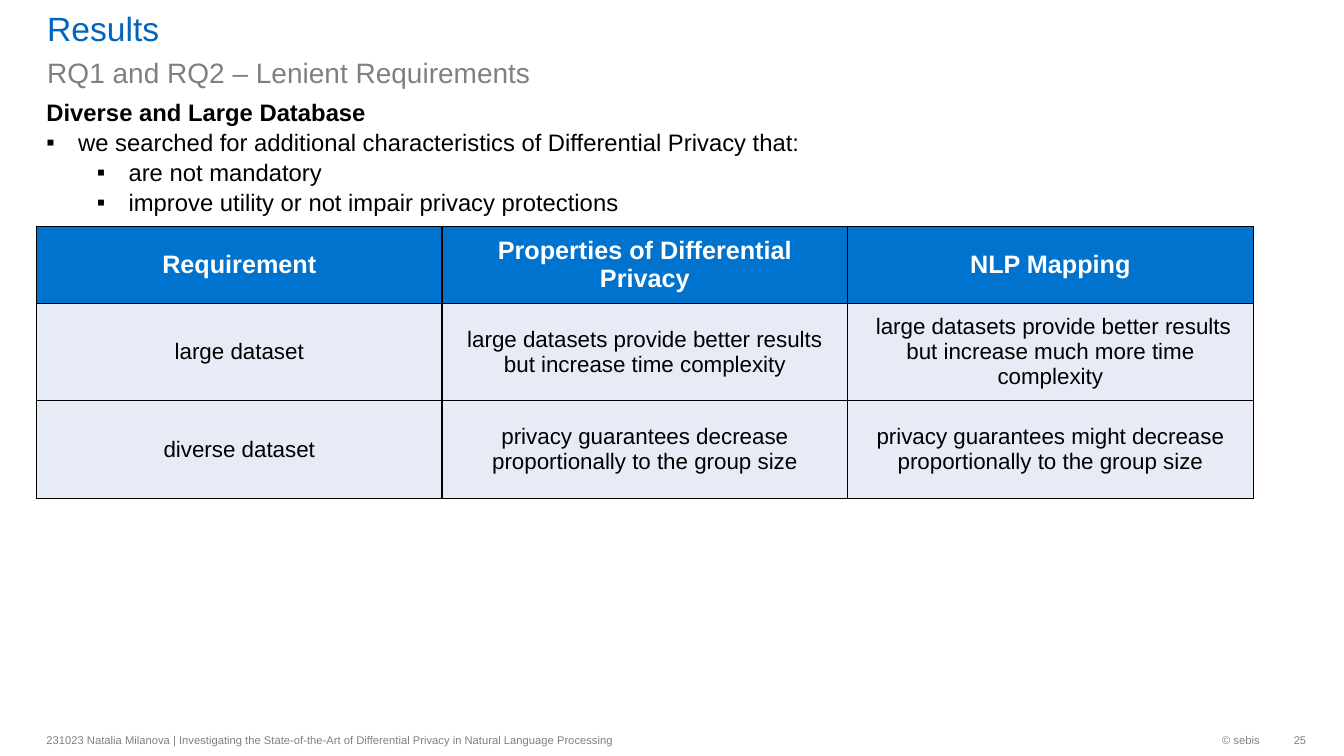
"""Builds the results slide on lenient requirements for differential privacy."""
from dataclasses import dataclass

from lxml import etree
from pptx import Presentation
from pptx import table as tb
from pptx import util as u
from pptx.dml import color as dml
from pptx.enum import text as et
from pptx.oxml import ns
from pptx.shapes import autoshape as au
from pptx.text import text as tx

COLORS = {
    "title": "0065BD", "grey": "808080", "black": "000000",
    "white": "FFFFFF", "header": "0073CF", "row": "E7EBF6",
}
LEFT, CENTER, RIGHT = et.PP_ALIGN.LEFT, et.PP_ALIGN.CENTER, et.PP_ALIGN.RIGHT
TOP, MIDDLE, BOTTOM = et.MSO_ANCHOR.TOP, et.MSO_ANCHOR.MIDDLE, et.MSO_ANCHOR.BOTTOM


@dataclass(frozen=True)
class Style:
    size: float
    color: str
    bold: bool = False
    align: et.PP_ALIGN = LEFT


@dataclass(frozen=True)
class Line:
    text: str
    style: Style
    level: int = 0
    indent: float = 0
    bullet: str = ""
    before: float = 0


@dataclass(frozen=True)
class Box:
    left: float
    top: float
    width: float
    height: float
    lines: tuple[Line, ...]
    anchor: et.MSO_ANCHOR = MIDDLE
    margins: tuple[float, float, float, float] = (0.25, 0.13, 0.25, 0.13)


TITLE = Style(24, "title")
SUBTITLE = Style(20, "grey")
LEAD = Style(17, "black", bold=True)
ITEM = Style(17, "black")
FOOTER = Style(8, "grey")
FOOTER_RIGHT = Style(8, "grey", align=RIGHT)
HEAD = Style(18, "white", bold=True, align=CENTER)
CELL = Style(16, "black", align=CENTER)

HANG = 0.8
PLACEHOLDERS = (
    Box(0.94, 0.23, 29.41, 0.99, (Line("Results", TITLE),), BOTTOM, (0.25, 0, 0.25, 0)),
    Box(0.94, 1.26, 29.41, 1.09, (Line("RQ1 and RQ2 – Lenient Requirements", SUBTITLE),), TOP),
    Box(0.92, 2.34, 30.66, 3.18, (
        Line("Diverse and Large Database", LEAD),
        Line("we searched for additional characteristics of Differential Privacy that:",
             ITEM, 0, HANG, "▪", 1),
        Line("are not mandatory", ITEM, 1, 2.07, "▪", 1),
        Line("improve utility or not impair privacy protections", ITEM, 1, 2.07, "▪", 1),
    ), TOP),
)
FOOTERS = (
    Box(0.92, 18.24, 16, 0.81, (
        Line("231023 Natalia Milanova | Investigating the State-of-the-Art of "
             "Differential Privacy in Natural Language Processing", FOOTER),)),
    Box(26.06, 18.25, 5.94, 0.81, (Line("© sebis", FOOTER_RIGHT),)),
    Box(32, 18.25, 0.92, 0.81, (Line("25", FOOTER_RIGHT),), margins=(0.25, 0.13, 0, 0.13)),
)
REQUIREMENTS = (
    ("Requirement", "Properties of Differential Privacy", "NLP Mapping"),
    ("large dataset",
     "large datasets provide better results but increase time complexity",
     " large datasets provide better results but increase much more time complexity"),
    ("diverse dataset",
     "privacy guarantees decrease proportionally to the group size",
     "privacy guarantees might decrease proportionally to the group size"),
)
COLUMN_WIDTH = 10.22
ROW_HEIGHTS = (1.93, 2.46, 2.46)


def apply(target: object, values: dict[str, object]) -> None:
    """Set every named attribute on the target."""
    for name, value in values.items():
        setattr(target, name, value)


def rgb(name: str) -> dml.RGBColor:
    """Return the named colour."""
    return dml.RGBColor.from_string(COLORS[name])


def write(tf: tx.TextFrame, lines: tuple[Line, ...]) -> None:
    """Fill a text frame with formatted paragraphs."""
    for i, line in enumerate(lines):
        p = tf.paragraphs[0] if i == 0 else tf.add_paragraph()
        ppr = p._p.get_or_add_pPr()
        ppr.set("marL", str(u.Cm(line.indent)))
        ppr.set("indent", str(-u.Cm(HANG) if line.bullet else 0))
        if line.bullet:
            etree.SubElement(ppr, ns.qn("a:buFont")).set("typeface", "Arial")
            etree.SubElement(ppr, ns.qn("a:buChar")).set("char", line.bullet)
        else:
            etree.SubElement(ppr, ns.qn("a:buNone"))
        apply(p, {"level": line.level, "alignment": line.style.align,
                  "space_before": u.Pt(line.before), "space_after": u.Pt(0)})
        r = p.add_run()
        r.text = line.text
        apply(r.font, {"name": "Arial", "size": u.Pt(line.style.size), "bold": line.style.bold})
        r.font.color.rgb = rgb(line.style.color)


def fill_box(sp: au.Shape, box: Box) -> None:
    """Place a text shape and write its lines."""
    apply(sp, {side: u.Cm(getattr(box, side)) for side in ("left", "top", "width", "height")})
    tf = sp.text_frame
    apply(tf, {"word_wrap": True, "auto_size": et.MSO_AUTO_SIZE.NONE,
               "vertical_anchor": box.anchor})
    sides = ("margin_left", "margin_top", "margin_right", "margin_bottom")
    apply(tf, {side: u.Cm(value) for side, value in zip(sides, box.margins)})
    write(tf, box.lines)


def add_borders(cell: tb._Cell) -> None:
    """Outline a cell with one-point black lines."""
    tcpr = cell._tc.get_or_add_tcPr()
    for i, side in enumerate(("lnL", "lnR", "lnT", "lnB")):
        ln = etree.Element(ns.qn(f"a:{side}"), w=str(u.Pt(1)))
        fill = etree.SubElement(ln, ns.qn("a:solidFill"))
        etree.SubElement(fill, ns.qn("a:srgbClr")).set("val", COLORS["black"])
        tcpr.insert(i, ln)


def fill_table(table: tb.Table) -> None:
    """Size the table and write the requirements."""
    table.horz_banding = False
    for column in table.columns:
        column.width = u.Cm(COLUMN_WIDTH)
    for i, (row, texts) in enumerate(zip(table.rows, REQUIREMENTS)):
        row.height = u.Cm(ROW_HEIGHTS[i])
        for cell, content in zip(row.cells, texts):
            cell.fill.solid()
            cell.fill.fore_color.rgb = rgb("row" if i else "header")
            cell.vertical_anchor = MIDDLE
            add_borders(cell)
            write(cell.text_frame, (Line(content, CELL if i else HEAD),))


def main() -> None:
    """Build and save the slide."""
    prs = Presentation()
    apply(prs, {"slide_width": u.Cm(33.87), "slide_height": u.Cm(19.05)})
    s = prs.slides.add_slide(prs.slide_layouts.get_by_name("Two Content"))
    for sp, box in zip(s.placeholders, PLACEHOLDERS):
        fill_box(sp, box)
    for box in FOOTERS:
        fill_box(s.shapes.add_textbox(0, 0, 0, 0), box)
    frame = s.shapes.add_table(
        len(REQUIREMENTS), len(REQUIREMENTS[0]), u.Cm(0.92), u.Cm(5.71),
        u.Cm(COLUMN_WIDTH * len(REQUIREMENTS[0])), u.Cm(sum(ROW_HEIGHTS)))
    fill_table(frame.table)
    prs.save("out.pptx")


if __name__ == "__main__":
    main()
